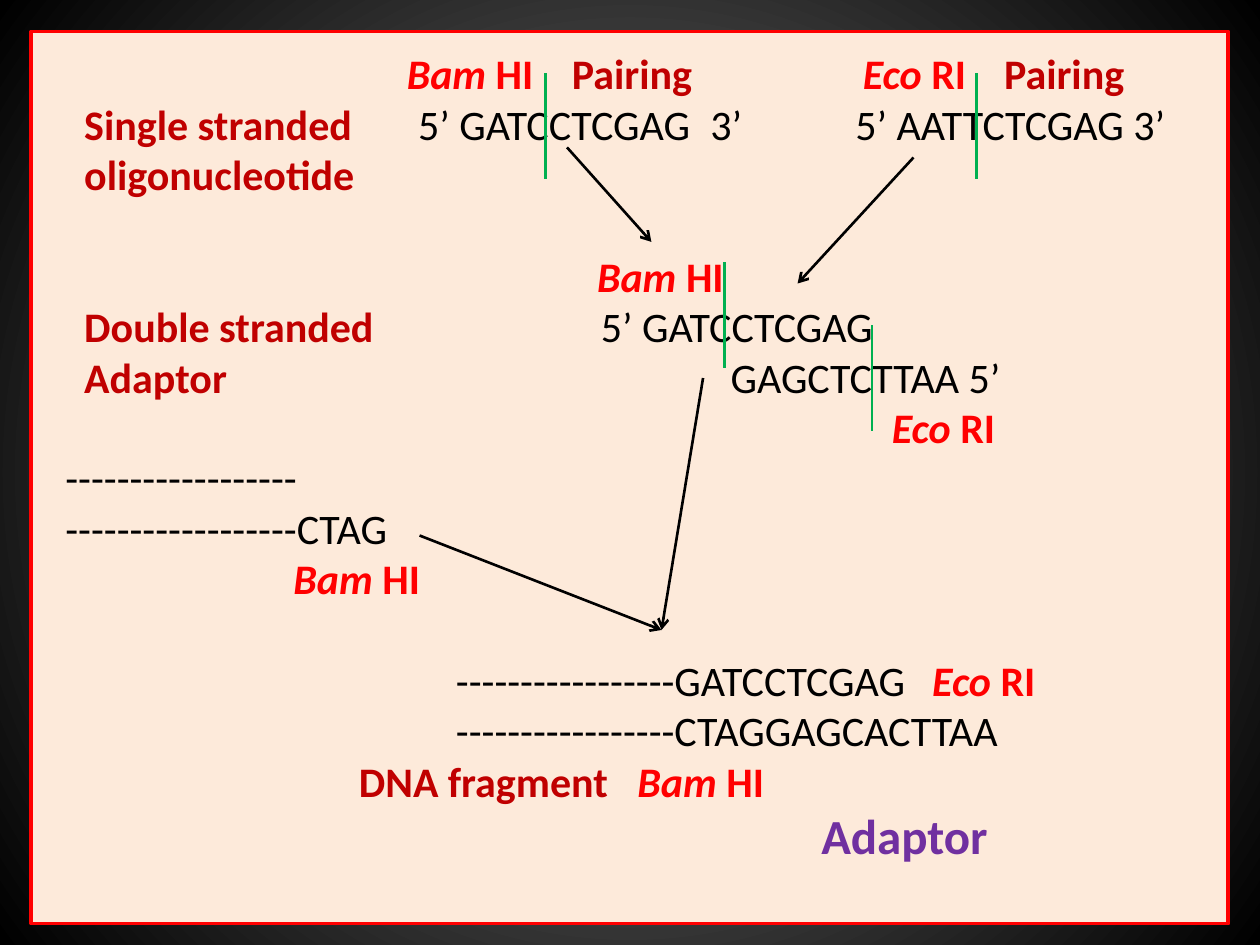
from lxml import etree
from pptx import Presentation
from pptx.dml.color import RGBColor
from pptx.enum.shapes import MSO_CONNECTOR, MSO_SHAPE
from pptx.oxml.ns import qn
from pptx.util import Inches, Pt

RECTANGLE = MSO_SHAPE.RECTANGLE
STRAIGHT = MSO_CONNECTOR.STRAIGHT
BLACK = RGBColor(0x00, 0x00, 0x00)
GRAY = RGBColor(0x7F, 0x7F, 0x7F)
CREAM = RGBColor(0xFD, 0xEA, 0xDA)
RED = RGBColor(0xFF, 0x00, 0x00)
DARK_RED = RGBColor(0xC0, 0x00, 0x00)
GREEN = RGBColor(0x00, 0xB0, 0x50)
PURPLE = RGBColor(0x70, 0x30, 0xA0)
BLANK_LAYOUT = 6
FONT = "Calibri"
LINE_GAP = 29.3

LABEL = {"color": DARK_RED, "bold": True}
ENZYME = {"color": RED, "bold": True}
GENUS = {**ENZYME, "italic": True}
BAM = [("Bam", GENUS), (" HI", ENZYME)]
ECO = [("Eco ", GENUS), ("RI", ENZYME)]


def label(text):
    return [(text, LABEL)]


def sequence(text):
    return [(text, {})]


DIAGRAM_LINES = [
    (0, [(2.71, BAM), (4.02, label("Pairing")), (6.33, ECO), (7.45, label("Pairing"))]),
    (0, [(0.15, label("Single stranded")), (2.8, sequence("5’ GATCCTCGAG")),
         (5.12, sequence("3’")), (6.27, sequence("5’ AATTCTCGAG 3’"))]),
    (0, [(0.15, label("oligonucleotide"))]),
    (LINE_GAP, [(4.22, BAM)]),
    (0, [(0.15, label("Double stranded")), (4.25, sequence("5’ GATCCTCGAG"))]),
    (0, [(0.15, label("Adaptor")), (5.28, sequence("GAGCTCTTAA 5’"))]),
    (0, [(6.56, ECO)]),
    (0, [(0, sequence("------------------"))]),
    (0, [(0, sequence("------------------CTAG"))]),
    (0, [(1.81, BAM)]),
    (LINE_GAP, [(3.1, sequence("-----------------GATCCTCGAG")), (6.88, ECO)]),
    (0, [(3.1, sequence("-----------------CTAGGAGCACTTAA"))]),
    (0, [(2.33, label("DNA fragment")), (4.54, BAM)]),
    (0, [(6, [("Adaptor", {"color": PURPLE, "bold": True, "size": 28})])]),
]

CUT_SITES = [(4.33, 0.58), (7.75, 0.58), (5.75, 2.08), (6.92, 2.58)]
CUT_HEIGHT = 0.84
ARROWS = [
    ((4.5, 1.17), (5.17, 1.92)),
    ((7.25, 1.25), (6.33, 2.25)),
    ((5.58, 3), (5.25, 5)),
    ((3.33, 4.25), (5.25, 5)),
]


def set_background(slide):
    fill = slide.background.fill
    fill.gradient()
    for stop, color in zip(fill.gradient_stops, (GRAY, BLACK)):
        stop.color.rgb = color
    gradient = slide.element.find(".//" + qn("a:gradFill"))
    gradient.remove(gradient.find(qn("a:lin")))
    circle = etree.SubElement(gradient, qn("a:path"), path="circle")
    etree.SubElement(circle, qn("a:fillToRect"), l="50000", t="50000", r="50000", b="50000")


def add_panel(slide, left, top, width, height):
    panel = slide.shapes.add_shape(
        RECTANGLE, Inches(left), Inches(top), Inches(width), Inches(height))
    panel.shadow.inherit = False
    panel.fill.solid()
    panel.fill.fore_color.rgb = CREAM
    panel.line.color.rgb = RED
    panel.line.width = Pt(2.25)


def add_run(paragraph, text, color=BLACK, size=24, bold=False, italic=False):
    run = paragraph.add_run()
    run.text = text
    font = run.font
    font.name = FONT
    font.size = Pt(size)
    font.bold = bold
    font.italic = italic
    font.color.rgb = color


def set_tab_stops(paragraph, positions):
    properties = paragraph._p.get_or_add_pPr()
    tab_list = etree.SubElement(properties, qn("a:tabLst"))
    for position in positions:
        etree.SubElement(tab_list, qn("a:tab"), pos=str(Inches(position)), algn="l")


def add_diagram_text(slide, left, top, width, height):
    frame = slide.shapes.add_textbox(
        Inches(left), Inches(top), Inches(width), Inches(height)).text_frame
    frame.word_wrap = True
    for index, (space, columns) in enumerate(DIAGRAM_LINES):
        paragraph = frame.add_paragraph() if index else frame.paragraphs[0]
        paragraph.space_before = Pt(space)
        positions = [position for position, runs in columns if position]
        if positions:
            set_tab_stops(paragraph, positions)
        for position, runs in columns:
            for order, (text, style) in enumerate(runs):
                tab = "\t" if position and order == 0 else ""
                add_run(paragraph, tab + text, **style)


def add_line(slide, start, end, color, arrow=False):
    connector = slide.shapes.add_connector(
        STRAIGHT, *(Inches(value) for value in (*start, *end)))
    connector.line.color.rgb = color
    connector.line.width = Pt(1.5)
    if arrow:
        etree.SubElement(connector.line._get_or_add_ln(), qn("a:tailEnd"), type="arrow")
    etree.SubElement(connector._element.spPr, qn("a:effectLst"))


def main():
    presentation = Presentation()
    presentation.slide_width = Inches(10)
    presentation.slide_height = Inches(7.5)
    slide = presentation.slides.add_slide(presentation.slide_layouts[BLANK_LAYOUT])
    set_background(slide)
    add_panel(slide, 0.25, 0.25, 9.5, 7.08)
    add_diagram_text(slide, 0.42, 0.33, 9.08, 6.63)
    for x, y in CUT_SITES:
        add_line(slide, (x, y), (x, y + CUT_HEIGHT), GREEN)
    for start, end in ARROWS:
        add_line(slide, start, end, BLACK, arrow=True)
    presentation.save("out.pptx")


if __name__ == "__main__":
    main()
